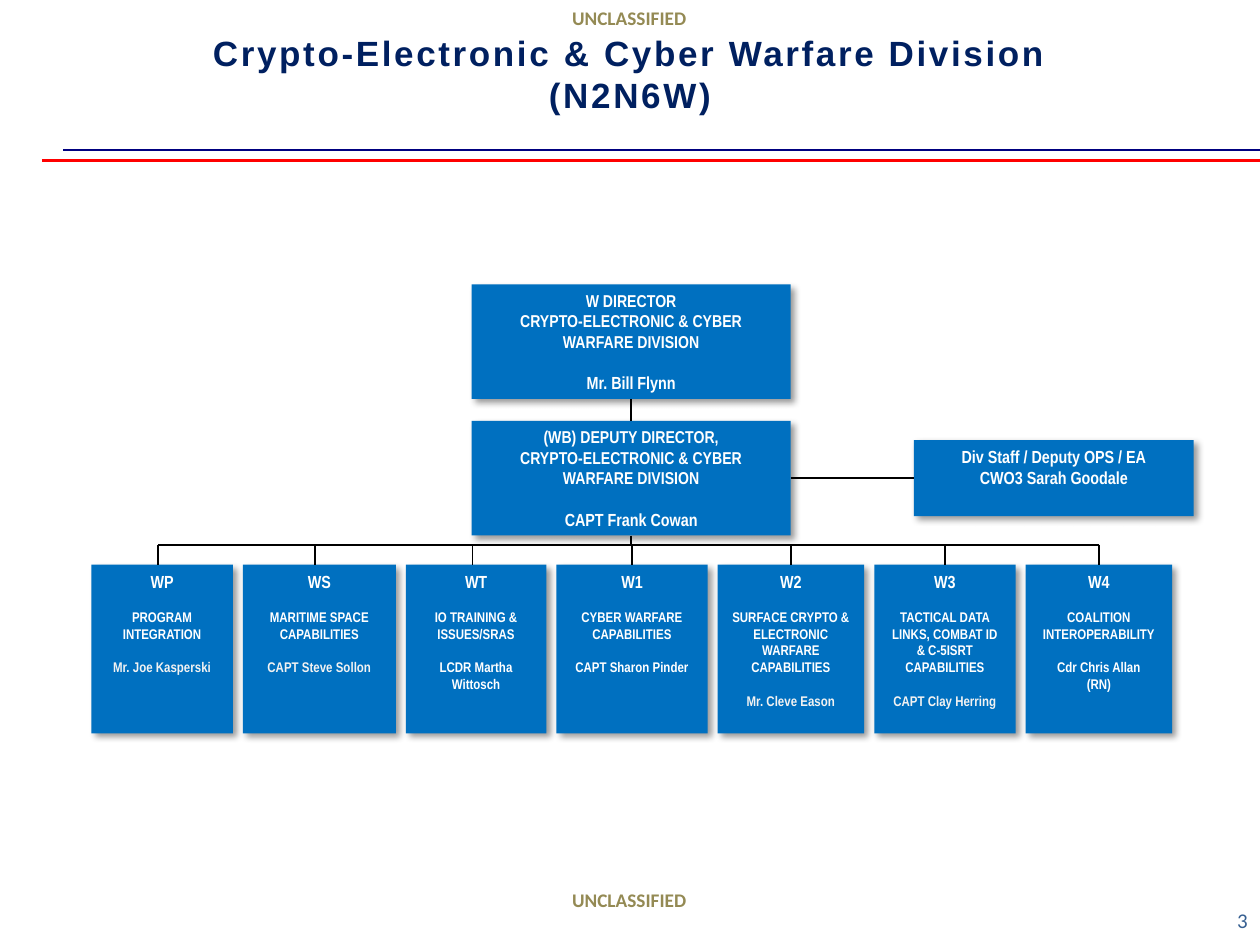
from dataclasses import dataclass
from typing import Optional

from lxml import etree
from pptx import Presentation
from pptx.dml.color import RGBColor
from pptx.enum.shapes import MSO_CONNECTOR, MSO_SHAPE
from pptx.enum.text import MSO_ANCHOR, PP_ALIGN
from pptx.oxml import parse_xml
from pptx.oxml.ns import qn
from pptx.util import Pt

STRAIGHT = MSO_CONNECTOR.STRAIGHT
RECTANGLE = MSO_SHAPE.RECTANGLE
TOP, MIDDLE = MSO_ANCHOR.TOP, MSO_ANCHOR.MIDDLE
CENTER, RIGHT = PP_ALIGN.CENTER, PP_ALIGN.RIGHT
SIDE_TOP, SIDE_LEFT, SIDE_BOTTOM, SIDE_RIGHT = range(4)

COLORS = {
    "box": "0070C0", "white": "FFFFFF", "off_white": "F2F2F2",
    "black": "000000", "navy_rule": "000080", "red_rule": "FF0000",
    "title": "002060", "marking": "948A54", "number": "376092",
}
SHADOW_XML = (
    '<a:effectLst xmlns:a="http://schemas.openxmlformats.org/drawingml/2006/main">'
    '<a:outerShdw blurRad="50800" dist="38100" dir="2700000" algn="tl" rotWithShape="0">'
    '<a:srgbClr val="000000"><a:alpha val="40000"/></a:srgbClr>'
    '</a:outerShdw></a:effectLst>'
)


@dataclass
class Line:
    text: str
    size: float
    gap: float = 0
    color: str = "white"
    font: str = "Arial Narrow"
    bold: bool = True
    spacing: float = 0


@dataclass
class Area:
    left: float
    top: float
    width: float
    height: float


@dataclass
class Branch:
    code: str
    name: str
    people: list[str]
    width: float
    drop_x: Optional[float] = None  # None: the drop meets the middle of the box
    color: str = "white"


def write_lines(shape, lines: list[Line], align=CENTER, anchor=TOP, wrap: bool = True) -> None:
    frame = shape.text_frame
    frame.word_wrap = wrap
    frame.vertical_anchor = anchor
    frame.margin_left = frame.margin_right = Pt(7)
    frame.margin_top = frame.margin_bottom = Pt(3.6)
    for index, line in enumerate(lines):
        paragraph = frame.add_paragraph() if index else frame.paragraphs[0]
        paragraph.alignment = align
        if line.gap:
            paragraph.space_before = Pt(line.gap)
        for part_index, part in enumerate(line.text.split("\n")):
            if part_index:
                paragraph.add_line_break()
            run = paragraph.add_run()
            run.text = part
            run.font.name = line.font
            run.font.size = Pt(line.size)
            run.font.bold = line.bold
            run.font.color.rgb = RGBColor.from_string(COLORS[line.color])
            if line.spacing:
                run.font._element.set("spc", str(round(line.spacing * 100)))


def add_label(slide, area: Area, line: Line, align=CENTER, anchor=TOP, wrap: bool = True) -> None:
    label = slide.shapes.add_textbox(Pt(area.left), Pt(area.top), Pt(area.width), Pt(area.height))
    write_lines(label, [line], align, anchor, wrap)


def add_box(slide, area: Area, lines: list[Line], anchor=TOP):
    box = slide.shapes.add_shape(
        RECTANGLE, Pt(area.left), Pt(area.top), Pt(area.width), Pt(area.height))
    box.fill.solid()
    box.fill.fore_color.rgb = RGBColor.from_string(COLORS["box"])
    box.line.fill.background()
    box._element.spPr.append(parse_xml(SHADOW_XML))
    write_lines(box, lines, anchor=anchor)
    return box


def add_line(slide, x1: float, y1: float, x2: float, y2: float,
             color: str = "black", width: float = 1):
    line = slide.shapes.add_connector(STRAIGHT, Pt(x1), Pt(y1), Pt(x2), Pt(y2))
    line.line.color.rgb = RGBColor.from_string(COLORS[color])
    line.line.width = Pt(width)
    etree.SubElement(line._element.spPr, qn("a:effectLst"))
    return line


def leader_lines(role: str, person: str) -> list[Line]:
    return [Line(role, 9.8),
            Line("CRYPTO-ELECTRONIC & CYBER WARFARE DIVISION", 9.8),
            Line(person, 10, gap=11.7)]


def branch_lines(branch: Branch) -> list[Line]:
    people = [Line(person, 8, 0 if index else 9.5, branch.color)
              for index, person in enumerate(branch.people)]
    return [Line(branch.code, 10), Line(branch.name, 8, 9.5), *people]


LEADER_LEFT, LEADER_WIDTH, LEADER_HEIGHT = 269.5, 182.3, 65.5
DIRECTOR = Area(LEADER_LEFT, 162.5, LEADER_WIDTH, LEADER_HEIGHT)
DEPUTY = Area(LEADER_LEFT, 240.5, LEADER_WIDTH, LEADER_HEIGHT)
STAFF = Area(522.2, 251.5, 160, 43.5)
BUS_Y, BUS_LEFT, BUS_RIGHT = 311.3, 90.3, 628
BRANCH_LEFT, BRANCH_TOP, BRANCH_HEIGHT, BRANCH_GAP = 52.2, 322.6, 96.5, 5.7
BRANCHES = [
    Branch("WP", "PROGRAM INTEGRATION", ["Mr. Joe Kasperski"], 80.9, 90.3, "off_white"),
    Branch("WS", "MARITIME SPACE CAPABILITIES", ["CAPT Steve Sollon"], 87.4, 180, "off_white"),
    Branch("WT", "IO TRAINING & ISSUES/SRAS", ["LCDR Martha Wittosch"], 80.4, 270),
    Branch("W1", "CYBER WARFARE CAPABILITIES", ["CAPT Sharon Pinder"], 86.4),
    Branch("W2", "SURFACE CRYPTO & ELECTRONIC WARFARE CAPABILITIES",
           ["Mr. Cleve Eason"], 83.8, color="off_white"),
    Branch("W3", "TACTICAL DATA LINKS, COMBAT ID & C-5ISRT CAPABILITIES",
           ["CAPT Clay Herring"], 80.8, color="off_white"),
    Branch("W4", "COALITION INTEROPERABILITY", ["Cdr Chris Allan", "(RN)"], 83.8),
]


def main() -> None:
    presentation = Presentation()
    presentation.slide_width, presentation.slide_height = Pt(720), Pt(540)
    slide = presentation.slides.add_slide(presentation.slide_layouts[6])

    # Header rules and classification markings
    add_line(slide, 24, 91.8, 720, 91.8, "red_rule", 1.5)
    add_line(slide, 36, 85.8, 720, 85.8, "navy_rule", 1.5)
    for top in (0, 504):
        add_label(slide, Area(319.6, top, 80, 20.6),
                  Line("UNCLASSIFIED", 11, color="marking", font="Calibri"), wrap=False)

    # Title and slide number
    add_label(slide, Area(36, 18, 648, 48.5),
              Line("Crypto-Electronic & Cyber Warfare Division\n(N2N6W)", 20,
                   color="title", font="Arial", spacing=1.5), anchor=MIDDLE)
    add_label(slide, Area(552, 511.5, 168, 28.5),
              Line("3", 12, color="number", font="Calibri", bold=False), RIGHT, MIDDLE)

    # Leadership and staff
    director = add_box(slide, DIRECTOR, leader_lines("W DIRECTOR", "Mr. Bill Flynn"), MIDDLE)
    deputy = add_box(slide, DEPUTY,
                     leader_lines("(WB) DEPUTY DIRECTOR,", "CAPT Frank Cowan"), MIDDLE)
    staff = add_box(slide, STAFF, [Line("Div Staff / Deputy OPS / EA", 10),
                                   Line("CWO3 Sarah Goodale", 10)])
    for start, start_side, end, end_side in (
            (director, SIDE_BOTTOM, deputy, SIDE_TOP),
            (deputy, SIDE_RIGHT, staff, SIDE_LEFT)):
        link = add_line(slide, 0, 0, 0, 0)
        link.begin_connect(start, start_side)
        link.end_connect(end, end_side)

    # Bus below the deputy
    trunk_x = LEADER_LEFT + LEADER_WIDTH / 2
    trunk = add_line(slide, trunk_x, DEPUTY.top + DEPUTY.height, trunk_x, BUS_Y)
    trunk.begin_connect(deputy, SIDE_BOTTOM)
    add_line(slide, BUS_LEFT, BUS_Y, BUS_RIGHT, BUS_Y)

    # Branches and their drops
    left = BRANCH_LEFT
    for branch in BRANCHES:
        box = add_box(slide, Area(left, BRANCH_TOP, branch.width, BRANCH_HEIGHT),
                      branch_lines(branch))
        drop_x = branch.drop_x or left + branch.width / 2
        drop = add_line(slide, drop_x, BUS_Y, drop_x, BRANCH_TOP)
        if branch.drop_x is None:
            drop.end_connect(box, SIDE_TOP)
        left += branch.width + BRANCH_GAP

    presentation.save("out.pptx")


if __name__ == "__main__":
    main()
